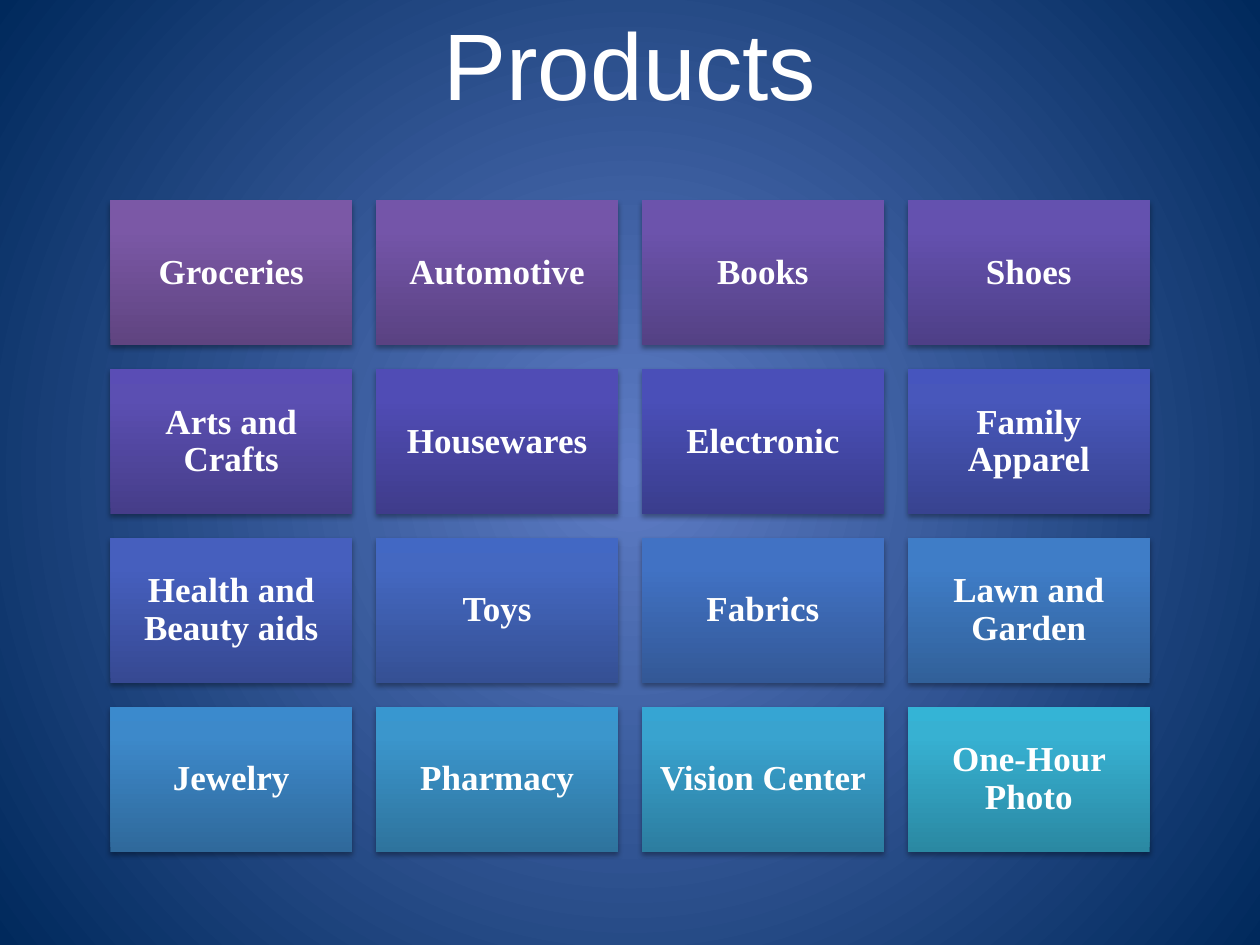
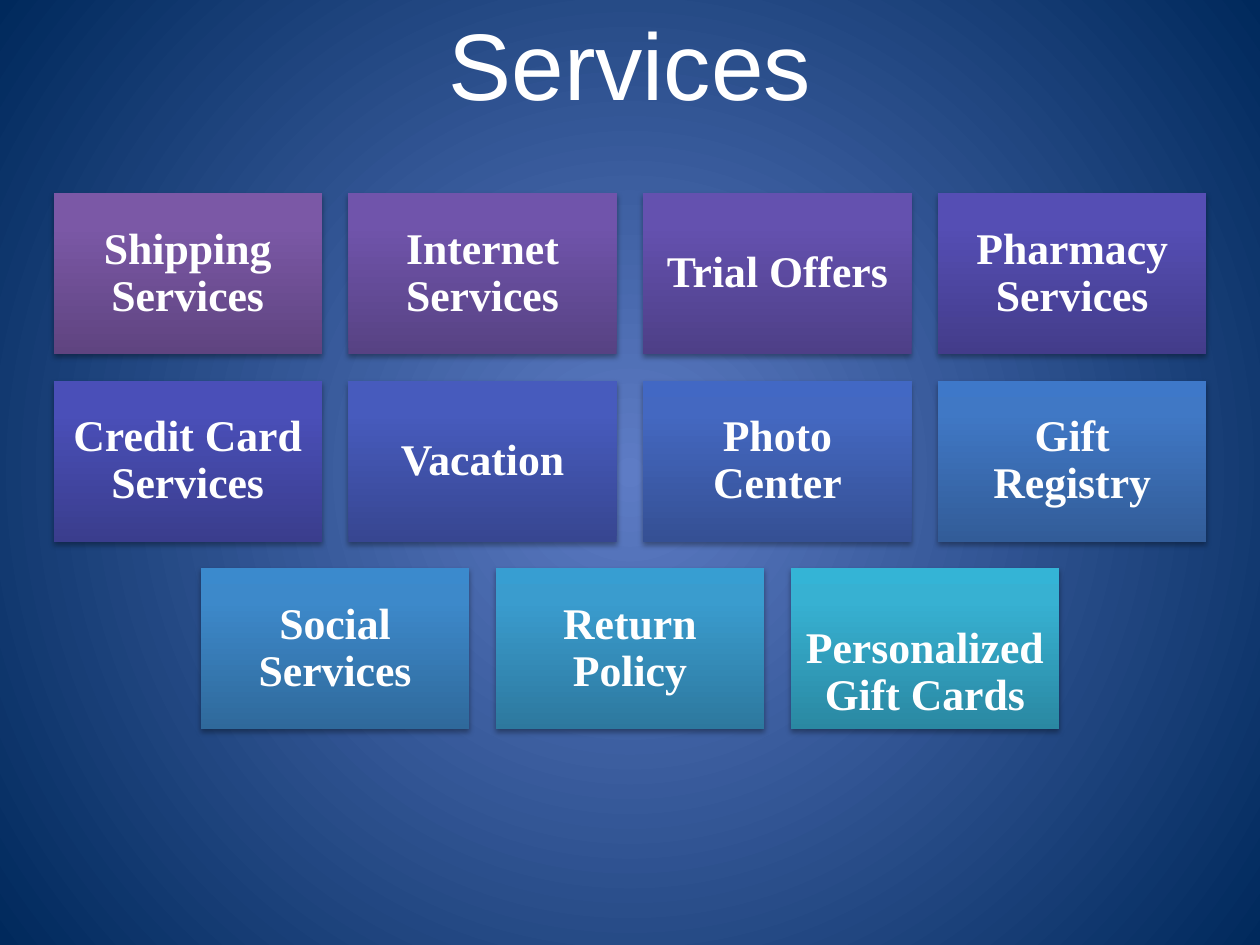
"""Build two slides, Products and Services, each a grid of centred gradient tiles."""
import colorsys
from copy import deepcopy

from pptx import Presentation
from pptx.dml.color import RGBColor
from pptx.enum import shapes, text
from pptx.oxml import parse_xml
from pptx.oxml.ns import nsdecls
from pptx.util import Inches, Pt

WHITE = RGBColor(0xFF, 0xFF, 0xFF)
GLOW = RGBColor(0x5E, 0x7C, 0xC5)
NAVY = RGBColor(0x00, 0x29, 0x5C)
FIRST_TILE = [RGBColor(0x5F, 0x44, 0x80), RGBColor(0x7B, 0x58, 0xA6), RGBColor(0x7C, 0x57, 0xA8)]
LAST_TILE = [RGBColor(0x2A, 0x88, 0xA2), RGBColor(0x37, 0xB1, 0xD2), RGBColor(0x34, 0xB4, 0xD6)]
TILE_STOPS = [0, 0.8, 1]
SLIDE_WIDTH, SLIDE_HEIGHT = 10, 7.5
COLUMNS = 4

TITLE_FONT = {"name": "Arial", "size": Pt(54), "bold": False}
TILE_FONT = {"name": "Times New Roman", "bold": True}
SHADOW = (
    f'<a:outerShdw {nsdecls("a")} blurRad="{Pt(3.1)}" dist="{Pt(1.8)}" dir="5400000" rotWithShape="0">'
    '<a:srgbClr val="000000"><a:alpha val="35000"/></a:srgbClr></a:outerShdw>'
)
CIRCLE_PATH = (
    f'<a:path {nsdecls("a")} path="circle">'
    '<a:fillToRect l="50000" t="50000" r="50000" b="50000"/></a:path>'
)

PAGES = [
    {
        "title": "Products", "top": 1.59, "width": 1.92, "height": 1.15, "gap": 0.19,
        "inset": 0.08, "size": 20,
        "labels": [
            "Groceries", "Automotive", "Books", "Shoes",
            "Arts and Crafts", "Housewares", "Electronic", "Family Apparel",
            "Health and Beauty aids", "Toys", "Fabrics", "Lawn and Garden",
            "Jewelry", "Pharmacy", "Vision Center", "One-Hour Photo",
        ],
    },
    {
        "title": "Services", "top": 1.53, "width": 2.13, "height": 1.28, "gap": 0.21,
        "inset": 0.1, "size": 25,
        "labels": [
            "Shipping Services", "Internet Services", "Trial Offers", "Pharmacy Services",
            "Credit Card Services", "Vacation", "Photo Center", "Gift Registry",
            "Social Services", "Return Policy", " Personalized Gift Cards",
        ],
    },
]


def blend(start, end, share):
    """Return the colour a given share of the way between two, by hue, lightness and saturation."""
    pair = [colorsys.rgb_to_hls(*(value / 255 for value in color)) for color in (start, end)]
    mixed = [a + (b - a) * share for a, b in zip(*pair)]
    return RGBColor(*(round(value * 255) for value in colorsys.hls_to_rgb(*mixed)))


def write(frame, words, font):
    """Put centred white words in a text frame."""
    frame.word_wrap = True
    para = frame.paragraphs[0]
    para.alignment = text.PP_ALIGN.CENTER
    span = para.add_run()
    span.text = words
    for name, value in font.items():
        setattr(span.font, name, value)
    span.font.color.rgb = WHITE
    return para


deck = Presentation()
deck.slide_width, deck.slide_height = Inches(SLIDE_WIDTH), Inches(SLIDE_HEIGHT)

backdrop = deck.slide_master.background.fill
backdrop.gradient()
for stop, position, color in zip(backdrop.gradient_stops, (0, 1), (GLOW, NAVY)):
    stop.position = position
    stop.color.rgb = color
line_path = deck.slide_master.element.xpath(".//p:bg//a:lin")[0]
line_path.getparent().replace(line_path, parse_xml(CIRCLE_PATH))

for content in PAGES:
    page = deck.slides.add_slide(deck.slide_layouts[5])
    title = page.shapes.title
    title.left, title.top = Inches(0), Inches(0)
    title.width, title.height = Inches(SLIDE_WIDTH), Inches(1.01)
    title.text_frame.vertical_anchor = text.MSO_ANCHOR.TOP
    write(title.text_frame, content["title"], TITLE_FONT)

    labels = content["labels"]
    width, height, gap = content["width"], content["height"], content["gap"]
    for index, label in enumerate(labels):
        row, column = divmod(index, COLUMNS)
        row_count = min(COLUMNS, len(labels) - row * COLUMNS)
        row_left = (SLIDE_WIDTH - row_count * width - (row_count - 1) * gap) / 2
        tile = page.shapes.add_shape(
            shapes.MSO_SHAPE.RECTANGLE,
            Inches(row_left + column * (width + gap)),
            Inches(content["top"] + row * (height + gap)),
            Inches(width),
            Inches(height),
        )
        tile.line.fill.background()
        tile.shadow.inherit = False
        tile.element.xpath(".//a:effectLst")[0].append(parse_xml(SHADOW))

        tile.fill.gradient()
        tile.fill.gradient_angle = 90
        stop_list = tile.element.xpath(".//a:gsLst")[0]
        stop_list.append(deepcopy(stop_list[0]))
        share = index / (len(labels) - 1)
        for stop, position, start, end in zip(tile.fill.gradient_stops, TILE_STOPS, FIRST_TILE, LAST_TILE):
            stop.position = position
            stop.color.rgb = blend(start, end, share)

        frame = tile.text_frame
        frame.vertical_anchor = text.MSO_ANCHOR.MIDDLE
        for side in ("left", "top", "right", "bottom"):
            setattr(frame, f"margin_{side}", Inches(content["inset"]))
        para = write(frame, label, TILE_FONT | {"size": Pt(content["size"])})
        para.line_spacing = 0.9

deck.save("out.pptx")
